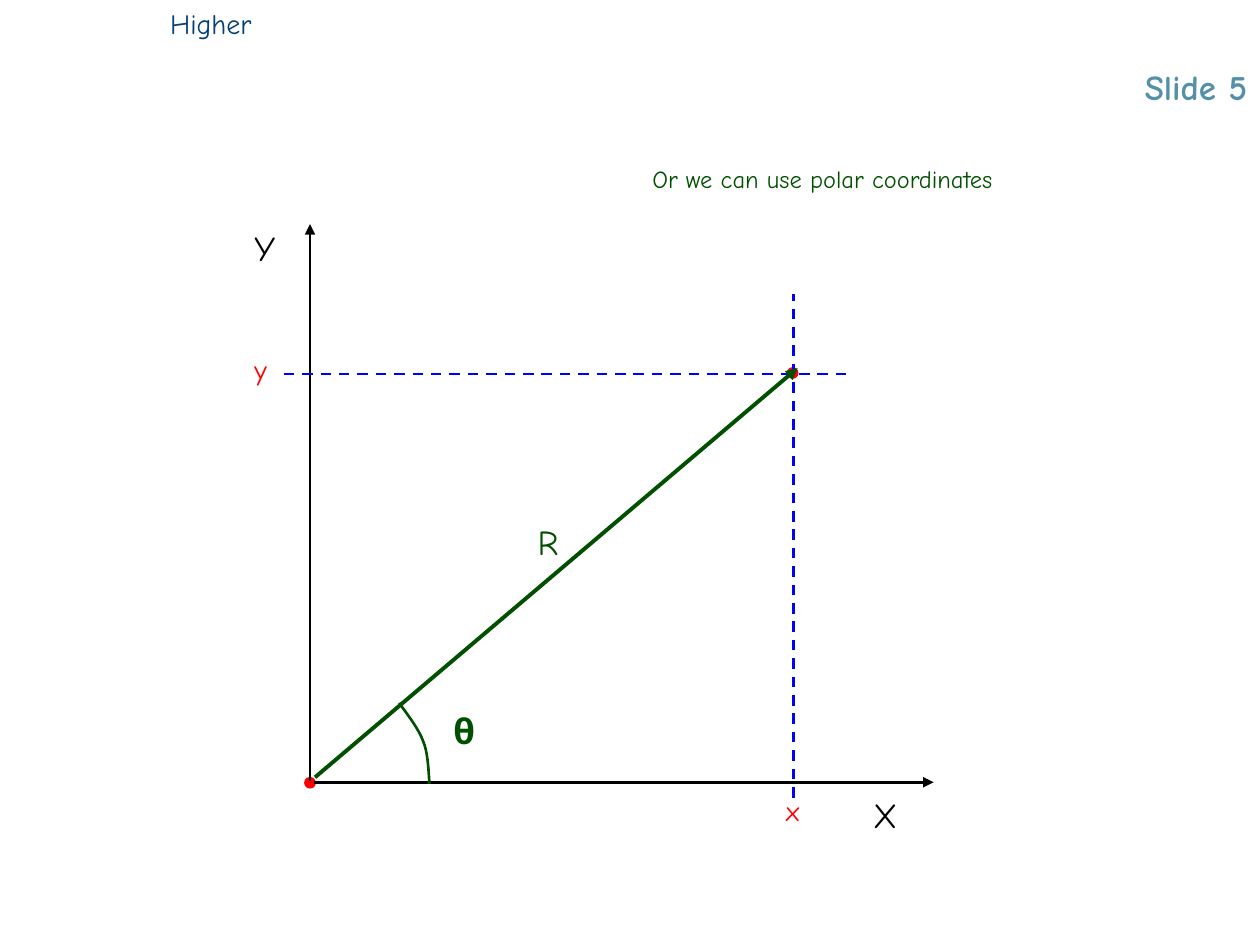
"""Build a slide that shows polar coordinates on a pair of axes."""
from pptx import Presentation
from pptx.dml.color import RGBColor
from pptx.enum.dml import MSO_LINE
from pptx.enum.shapes import MSO_CONNECTOR as CONN, MSO_SHAPE as SHAPE
from pptx.enum.text import MSO_ANCHOR as ANCHOR, MSO_AUTO_SIZE as AUTO, PP_ALIGN as ALIGN
from pptx.oxml.ns import qn
from pptx.util import Cm, Pt
from lxml.etree import SubElement

COLORS = {
    "heading": "5490A8",
    "level": "034176",
    "axis": "000000",
    "point": "FF0000",
    "guide": "0000FF",
    "polar": "005000",
}
FONT = "Comic Neue"


def rgb(name):
    return RGBColor.from_string(COLORS[name])


def write(tf, text, size=20, color="axis", bold=False, align=ALIGN.LEFT):
    """Put one formatted run into a text frame."""
    p = tf.paragraphs[0]
    p.alignment = align
    r = p.add_run()
    r.text = text
    r.font.name = FONT
    r.font.size = Pt(size)
    r.font.bold = bold
    r.font.color.rgb = rgb(color)


def bezier(start, c1, c2, end, steps=10):
    """Return points along a cubic curve, without its start."""
    points = []
    for i in range(1, steps + 1):
        t = i / steps
        weights = ((1 - t) ** 3, 3 * t * (1 - t) ** 2, 3 * t * t * (1 - t), t ** 3)
        points.append(tuple(
            sum(w * c for w, c in zip(weights, coords))
            for coords in zip(start, c1, c2, end)))
    return points


class Diagram:
    """Draw styled elements on one slide, with lengths in centimetres."""

    def __init__(self, slide):
        self.slide = slide
        self.shapes = slide.shapes

    def title(self, text, x, y, w, h):
        sp = self.shapes.title
        sp.left, sp.top, sp.width, sp.height = Cm(x), Cm(y), Cm(w), Cm(h)
        tf = sp.text_frame
        tf.auto_size = AUTO.NONE
        tf.vertical_anchor = ANCHOR.BOTTOM
        tf.margin_bottom = Cm(0.23)
        write(tf, text, color="heading", bold=True, align=ALIGN.RIGHT)

    def label(self, text, x, y, w=1.91, h=1.09, **style):
        tf = self.shapes.add_textbox(Cm(x), Cm(y), Cm(w), Cm(h)).text_frame
        tf.word_wrap = True
        write(tf, text, **style)

    def dot(self, x, y, size=0.21):
        sp = self.shapes.add_shape(
            SHAPE.OVAL, Cm(x - size / 2), Cm(y - size / 2), Cm(size), Cm(size))
        sp.shadow.inherit = False
        sp.fill.solid()
        sp.fill.fore_color.rgb = rgb("point")
        sp.line.color.rgb = rgb("point")
        sp.line.width = Pt(0.75)

    def line(self, x1, y1, x2, y2, color="axis", width=1.5, dash=False, arrow=False):
        cx = self.shapes.add_connector(CONN.STRAIGHT, Cm(x1), Cm(y1), Cm(x2), Cm(y2))
        cx.line.color.rgb = rgb(color)
        cx.line.width = Pt(width)
        if dash:
            cx.line.dash_style = MSO_LINE.DASH
        if arrow:
            SubElement(cx.line._get_or_add_ln(), qn("a:tailEnd"), type="triangle")
        SubElement(cx._element.spPr, qn("a:effectLst"))

    def curve(self, points, color):
        start, *rest = [(Cm(x), Cm(y)) for x, y in points]
        fb = self.shapes.build_freeform(*start)
        fb.add_line_segments(rest, close=False)
        sp = fb.convert_to_shape()
        sp.shadow.inherit = False
        sp.fill.background()
        sp.line.color.rgb = rgb(color)
        sp.line.width = Pt(1.5)


def main():
    prs = Presentation()
    prs.slide_width, prs.slide_height = Cm(25.4), Cm(19.05)
    d = Diagram(prs.slides.add_slide(prs.slide_layouts[5]))

    d.title("Slide 5", 4.24, 0.43, 21.16, 1.96)
    d.label("Higher", 3.18, 0, 9.09, 0.94, size=16, color="level")

    d.dot(6.25, 15.78)
    d.dot(15.98, 7.52)
    d.line(6.32, 15.77, 18.82, 15.77, arrow=True)
    d.line(6.25, 15.75, 6.25, 4.52, arrow=True)
    d.label("X", 17.35, 15.88)
    d.label("Y", 4.88, 4.45)

    d.line(16, 16.08, 16, 5.92, color="guide", dash=True)
    d.line(5.72, 7.54, 17.15, 7.54, color="guide", dash=True)
    d.label("x", 15.6, 15.88, h=0.94, size=16, color="point")
    d.label("y", 4.88, 6.99, h=0.94, size=16, color="point")

    d.label("Or we can use polar coordinates", 12.9, 3.18, 9.53, 0.84,
            size=14, color="polar")
    d.line(6.35, 15.67, 16.08, 7.42, color="polar", width=2.25, arrow=True)
    d.label("R", 10.59, 10.36, color="polar")

    top, middle, bottom = (8.05, 14.17), (8.53, 14.94), (8.66, 15.8)
    arc = [top]
    arc += bezier(top, (8.13, 14.3), (8.43, 14.66), middle)
    arc += bezier(middle, (8.64, 15.19), (8.64, 15.62), bottom)
    d.curve(arc, "polar")
    d.label("θ", 8.89, 14.17, color="polar", bold=True)

    prs.save("out.pptx")


if __name__ == "__main__":
    main()
